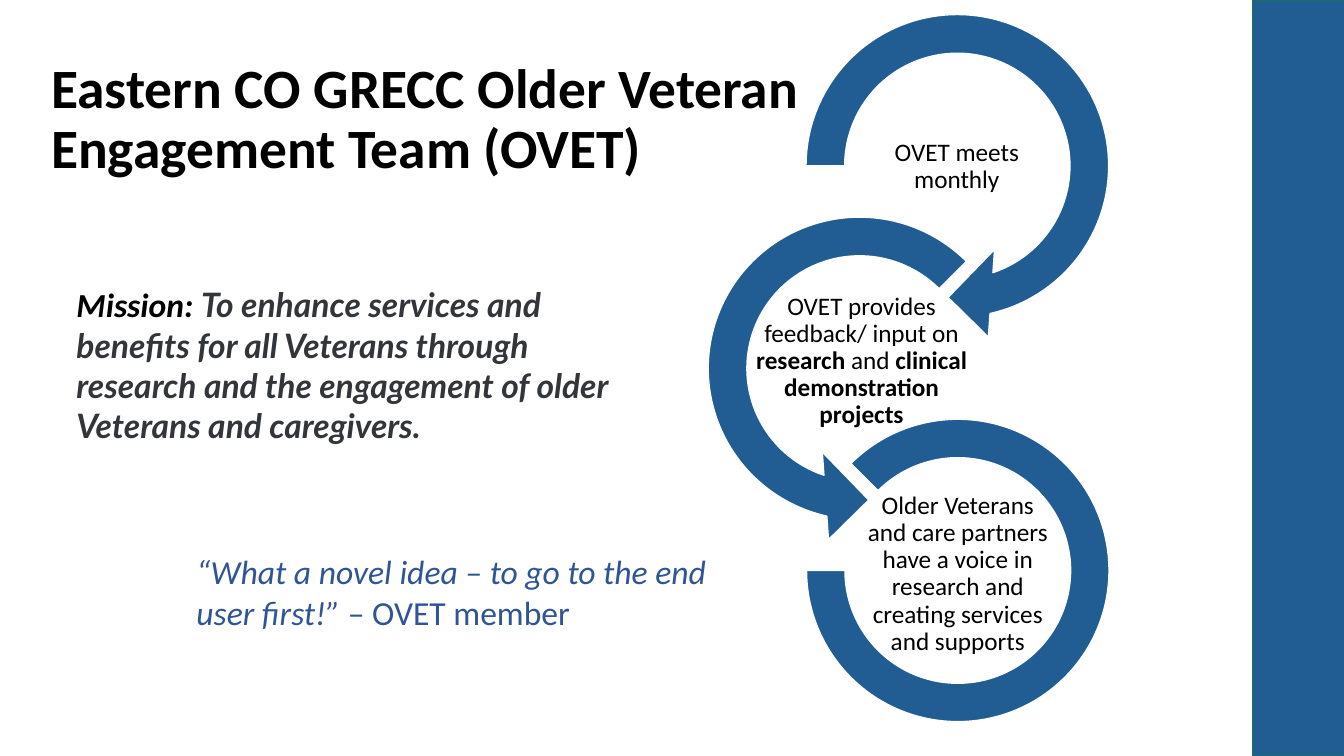
from dataclasses import dataclass

from pptx import Presentation
from pptx.dml.color import RGBColor
from pptx.enum.shapes import MSO_SHAPE
from pptx.enum.text import MSO_ANCHOR, PP_ALIGN
from pptx.util import Inches, Pt


@dataclass(frozen=True)
class Theme:
    blue: str = "215D93"
    green: str = "157259"
    white: str = "FFFFFF"
    black: str = "000000"
    gray: str = "32363A"
    quote: str = "2F5597"
    font: str = "Calibri"
    accent: str = "Lato"
    title: float = 39.6
    body: float = 24
    label: float = 18


THEME = Theme()


@dataclass(frozen=True)
class Box:
    left: float
    top: float
    width: float
    height: float

    def lengths(self) -> tuple:
        return tuple(Inches(v) for v in (self.left, self.top, self.width, self.height))


@dataclass(frozen=True)
class Run:
    text: str
    size: float = THEME.label
    color: str = THEME.black
    font: str = THEME.font
    bold: bool = False
    italic: bool = False


@dataclass(frozen=True)
class Ring:
    kind: MSO_SHAPE
    box: Box
    adjust: tuple[float, ...]
    label: Box
    runs: tuple[Run, ...]


@dataclass(frozen=True)
class Note:
    box: Box
    runs: tuple[Run, ...]
    spacing: float = 1.0
    anchor: MSO_ANCHOR = MSO_ANCHOR.TOP


RINGS = (
    Ring(MSO_SHAPE.CIRCULAR_ARROW, Box(7.75, -0.1, 3.49, 3.49),
         (0.11, 11.423, 45, 108, 0.125), Box(8.52, 1.17, 1.94, 0.97),
         (Run("OVET meets monthly"),)),
    Ring(MSO_SHAPE.LEFT_CIRCULAR_ARROW, Box(6.78, 1.91, 3.49, 3.49),
         (0.11, 11.423, 63, 189, 0.125), Box(7.45, 3.1, 2.19, 0.97),
         (Run("OVET provides feedback/ input on "), Run("research", bold=True),
          Run(" and "), Run("clinical demonstration projects", bold=True))),
    Ring(MSO_SHAPE.BLOCK_ARC, Box(8, 4.16, 3, 3),
         (135, 108, 0.127), Box(8.53, 5.21, 1.94, 0.97),
         (Run("Older Veterans and care partners have a voice in research "
              "and creating services and supports"),)),
)

NOTES = (
    Note(Box(0.41, 0.4, 7.68, 1.6),
         (Run("Eastern CO GRECC Older Veteran Engagement Team (OVET)",
              THEME.title, bold=True),),
         0.9, MSO_ANCHOR.MIDDLE),
    Note(Box(0.66, 2.77, 5.66, 1.72),
         (Run("Mission: ", THEME.body, bold=True, italic=True),
          Run("To enhance services and benefits for all Veterans through research "
              "and the engagement of older Veterans and caregivers.",
              THEME.body, THEME.gray, THEME.accent, True, True))),
    Note(Box(1.85, 5.42, 5.28, 0.91),
         (Run("“What a novel idea – to go to the end user first!” ",
              THEME.body, THEME.quote, italic=True),
          Run("– OVET member", THEME.body, THEME.quote))),
)


def add_solid(shapes, kind: MSO_SHAPE, box: Box, edge: str):
    shape = shapes.add_shape(kind, *box.lengths())
    shape.shadow.inherit = False
    shape.fill.solid()
    shape.fill.fore_color.rgb = RGBColor.from_string(THEME.blue)
    shape.line.color.rgb = RGBColor.from_string(edge)
    shape.line.width = Pt(1)
    return shape


def add_note(shapes, note: Note):
    frame = shapes.add_textbox(*note.box.lengths()).text_frame
    frame.word_wrap = True
    frame.vertical_anchor = note.anchor
    line = frame.paragraphs[0]
    line.line_spacing = note.spacing
    for item in note.runs:
        run = line.add_run()
        run.text = item.text
        run.font.name = item.font
        run.font.size = Pt(item.size)
        run.font.bold = item.bold
        run.font.italic = item.italic
        run.font.color.rgb = RGBColor.from_string(item.color)
    return frame


def add_ring(shapes, ring: Ring) -> None:
    """Draw a ring and the centred label inside it."""
    arc = add_solid(shapes, ring.kind, ring.box, THEME.white)
    for index, value in enumerate(ring.adjust):
        arc.adjustments[index] = value
    frame = add_note(shapes, Note(ring.label, ring.runs, 0.9, MSO_ANCHOR.MIDDLE))
    frame.margin_left = frame.margin_right = Inches(0.01)
    frame.margin_top = frame.margin_bottom = Inches(0.01)
    frame.paragraphs[0].alignment = PP_ALIGN.CENTER


def main() -> None:
    deck = Presentation()
    deck.slide_width, deck.slide_height = Inches(13.33), Inches(7.5)
    shapes = deck.slides.add_slide(deck.slide_layouts[6]).shapes
    add_solid(shapes, MSO_SHAPE.RECTANGLE, Box(12.42, 0, 0.92, 7.5), THEME.green)
    cycle = shapes.add_group_shape().shapes
    for ring in RINGS:
        add_ring(cycle, ring)
    for note in NOTES:
        add_note(shapes, note)
    deck.save("out.pptx")


if __name__ == "__main__":
    main()
